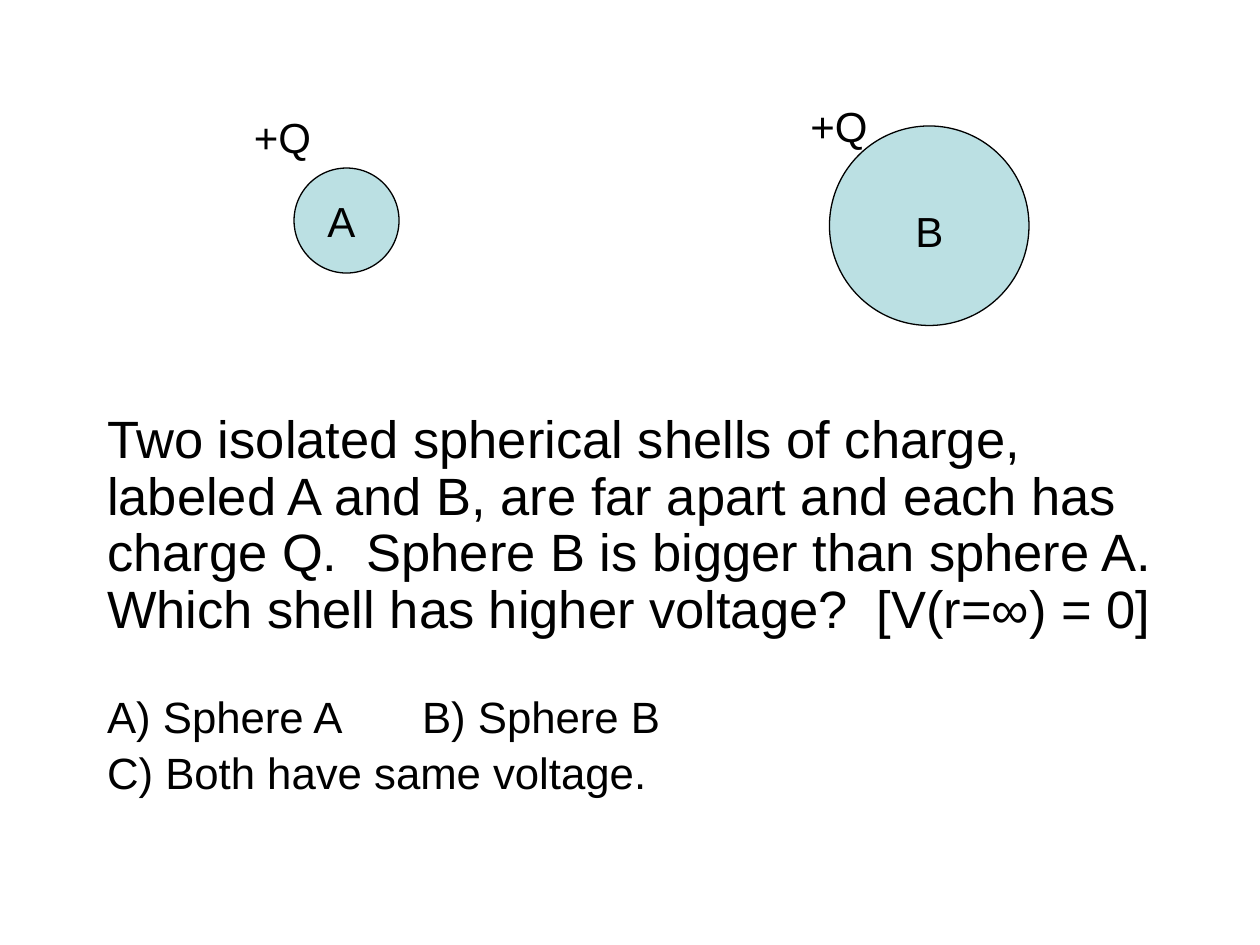
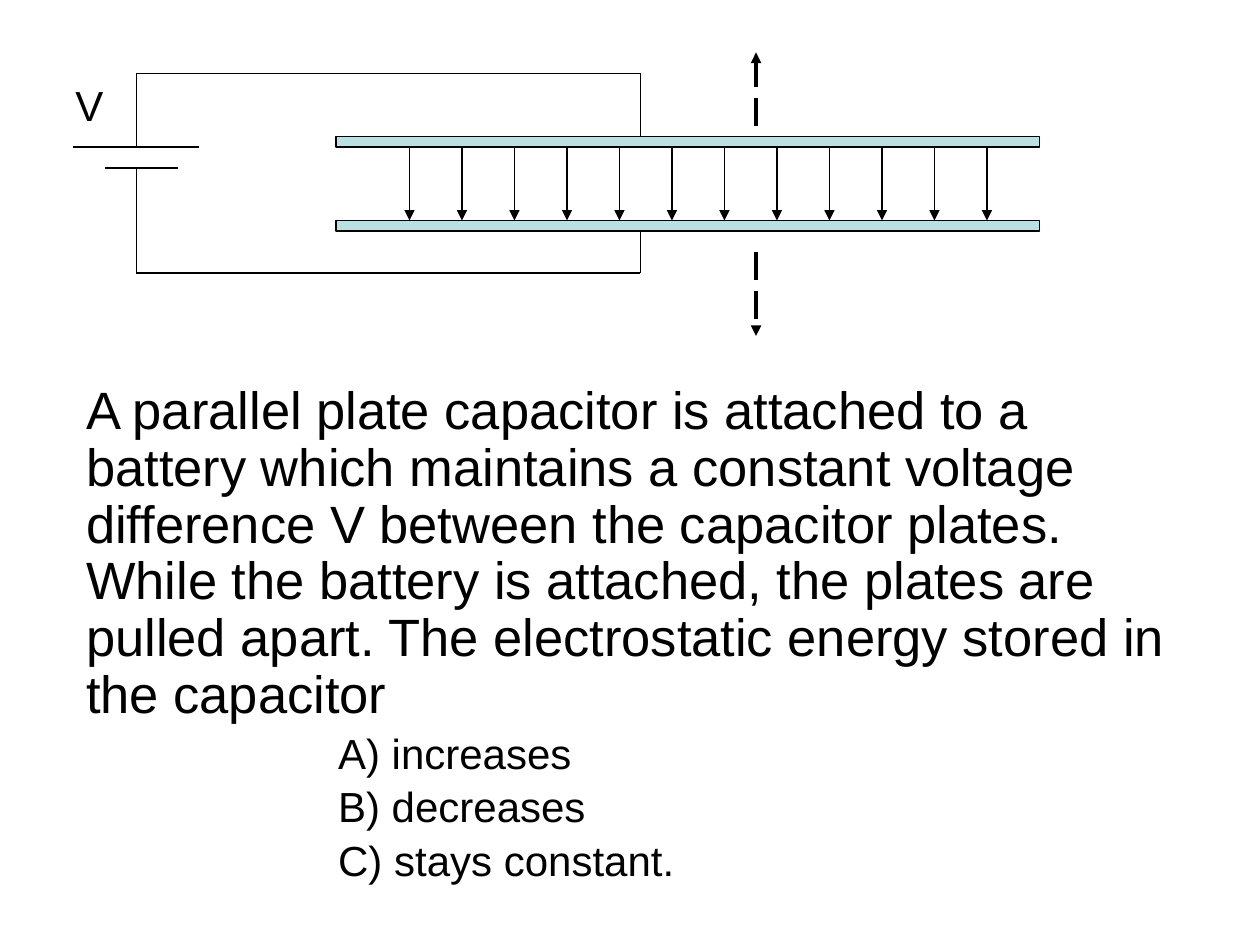
from dataclasses import dataclass

from lxml.etree import SubElement
from pptx import Presentation
from pptx.dml.color import RGBColor
from pptx.enum.dml import MSO_LINE_DASH_STYLE as Dash
from pptx.enum.shapes import MSO_CONNECTOR as Link, MSO_SHAPE as Preset
from pptx.enum.text import MSO_ANCHOR as Anchor, MSO_AUTO_SIZE as AutoSize, PP_ALIGN as Align
from pptx.oxml.ns import qn
from pptx.util import Cm, Pt

BLACK, PALE_TEAL = "000000", "BBE0E3"
FONT = "Arial"
LABEL_SIZE = 24
THIN, THICK = 0.75, 2


@dataclass(frozen=True)
class Frame:
    """Left, top, width and height in grid steps."""
    left: float
    top: float
    width: float
    height: float


@dataclass(frozen=True)
class Label:
    text: str
    frame: Frame


@dataclass(frozen=True)
class Solid:
    preset: Preset
    frame: Frame


@dataclass(frozen=True)
class Line:
    x1: float
    y1: float
    x2: float
    y2: float
    arrow: bool = False
    pulled: bool = False


@dataclass(frozen=True)
class Paragraph:
    text: str
    size: float
    before: float
    indent: float = 0


def grid(steps: float) -> int:
    """Length of a number of steps, twelve to the inch."""
    return Cm(2.54 * steps / 12)


def box_of(frame: Frame) -> tuple:
    return tuple(grid(n) for n in (frame.left, frame.top, frame.width, frame.height))


def apply(target, values: dict) -> None:
    for name, value in values.items():
        setattr(target, name, value)


def colour(target, hex_value: str) -> None:
    target.rgb = RGBColor.from_string(hex_value)


def write(para, text: str, size: float) -> None:
    span = para.add_run()
    span.text = text
    apply(span.font, {"name": FONT, "size": Pt(size)})
    colour(span.font.color, BLACK)


def add_label(page, label: Label) -> None:
    box = page.shapes.add_textbox(*box_of(label.frame))
    apply(box.text_frame, {"word_wrap": True, "auto_size": AutoSize.SHAPE_TO_FIT_TEXT})
    write(box.text_frame.paragraphs[0], label.text, LABEL_SIZE)


def add_solid(page, solid: Solid) -> None:
    shape = page.shapes.add_shape(solid.preset, *box_of(solid.frame))
    shape.shadow.inherit = False
    shape.fill.solid()
    colour(shape.fill.fore_color, PALE_TEAL)
    colour(shape.line.color, BLACK)
    shape.line.width = Pt(THIN)


def add_line(page, line: Line) -> None:
    ends = (grid(n) for n in (line.x1, line.y1, line.x2, line.y2))
    link = page.shapes.add_connector(Link.STRAIGHT, *ends)
    colour(link.line.color, BLACK)
    link.line.width = Pt(THICK if line.pulled else THIN)
    if line.pulled:
        link.line.dash_style = Dash.LONG_DASH
    properties = link._element.spPr
    if line.arrow:
        SubElement(properties.find(qn("a:ln")), qn("a:tailEnd"), type="triangle")
    SubElement(properties, qn("a:effectLst"))


def add_question(deck, frame: Frame, paragraphs: list[Paragraph]):
    """Add a page whose body placeholder holds the question and its answers."""
    page = deck.slides.add_slide(deck.slide_layouts[1])
    title, body = page.shapes.title, page.placeholders[1]
    title._element.getparent().remove(title._element)
    apply(body, dict(zip(("left", "top", "width", "height"), box_of(frame))))
    text = body.text_frame
    apply(text, {"word_wrap": True, "auto_size": AutoSize.NONE, "vertical_anchor": Anchor.TOP})
    for index, item in enumerate(paragraphs):
        para = text.add_paragraph() if index else text.paragraphs[0]
        apply(para, {"line_spacing": 0.9, "space_before": Pt(item.before), "alignment": Align.LEFT})
        properties = para._p.get_or_add_pPr()
        properties.set("marL", str(grid(item.indent)))
        properties.set("indent", "0")
        SubElement(properties, qn("a:buNone"))
        write(para, item.text, item.size)
    return page


def build_spheres(deck) -> None:
    page = add_question(deck, Frame(9, 38.75, 105.6, 45.4), [
        Paragraph("Two isolated spherical shells of charge, labeled A and B, are far apart and "
                  "each has charge Q.  Sphere B is bigger than sphere A.  Which shell has "
                  "higher voltage?  [V(r=∞) = 0]", 30, 6),
        Paragraph("A) Sphere A\t\tB) Sphere B", 25, 32),
        Paragraph("C) Both have same voltage.", 25, 5),
    ])
    for sphere in (Frame(28, 16, 10, 10), Frame(79, 12, 19, 19)):
        add_solid(page, Solid(Preset.OVAL, sphere))
    for label in (
        Label("+Q", Frame(23, 10, 9, 6)),
        Label("+Q", Frame(76, 9, 9, 6)),
        Label("A", Frame(30, 18, 6, 6)),
        Label("B", Frame(86, 19, 6, 6)),
    ):
        add_label(page, label)


def build_capacitor(deck) -> None:
    answers = ("A) increases", "B) decreases", "C) stays constant.")
    page = add_question(deck, Frame(7, 36, 106, 45), [
        Paragraph("A parallel plate capacitor is attached to a battery which maintains a "
                  "constant voltage difference V between the capacitor plates.  While the "
                  "battery is attached, the plates are pulled apart. The electrostatic energy "
                  "stored in the capacitor", 30, 6),
        *(Paragraph(answer, 24, 4.8, indent=24) for answer in answers),
    ])
    upper_plate, lower_plate = 13, 21
    for top in (lower_plate, upper_plate):
        add_solid(page, Solid(Preset.RECTANGLE, Frame(32, top, 67, 1)))

    field = [Line(x, upper_plate + 1, x, lower_plate, arrow=True) for x in range(39, 95, 5)]
    battery = [Line(7, 14, 19, 14), Line(10, 16, 17, 16)]
    wires = []
    for pole, rail, plate in ((14, 7, upper_plate), (16, 26, lower_plate + 1)):
        wires += [Line(13, pole, 13, rail), Line(13, rail, 61, rail), Line(61, rail, 61, plate)]
    pulls = [Line(72, start, 72, end, arrow=True, pulled=True) for start, end in ((12, 5), (24, 32))]
    for line in field + battery + wires + pulls:
        add_line(page, line)
    add_label(page, Label("V", Frame(6, 7, 7, 6)))


def main() -> None:
    deck = Presentation()
    apply(deck, {"slide_width": Cm(25.4), "slide_height": Cm(19.05)})
    build_spheres(deck)
    build_capacitor(deck)
    deck.save("out.pptx")


if __name__ == "__main__":
    main()
